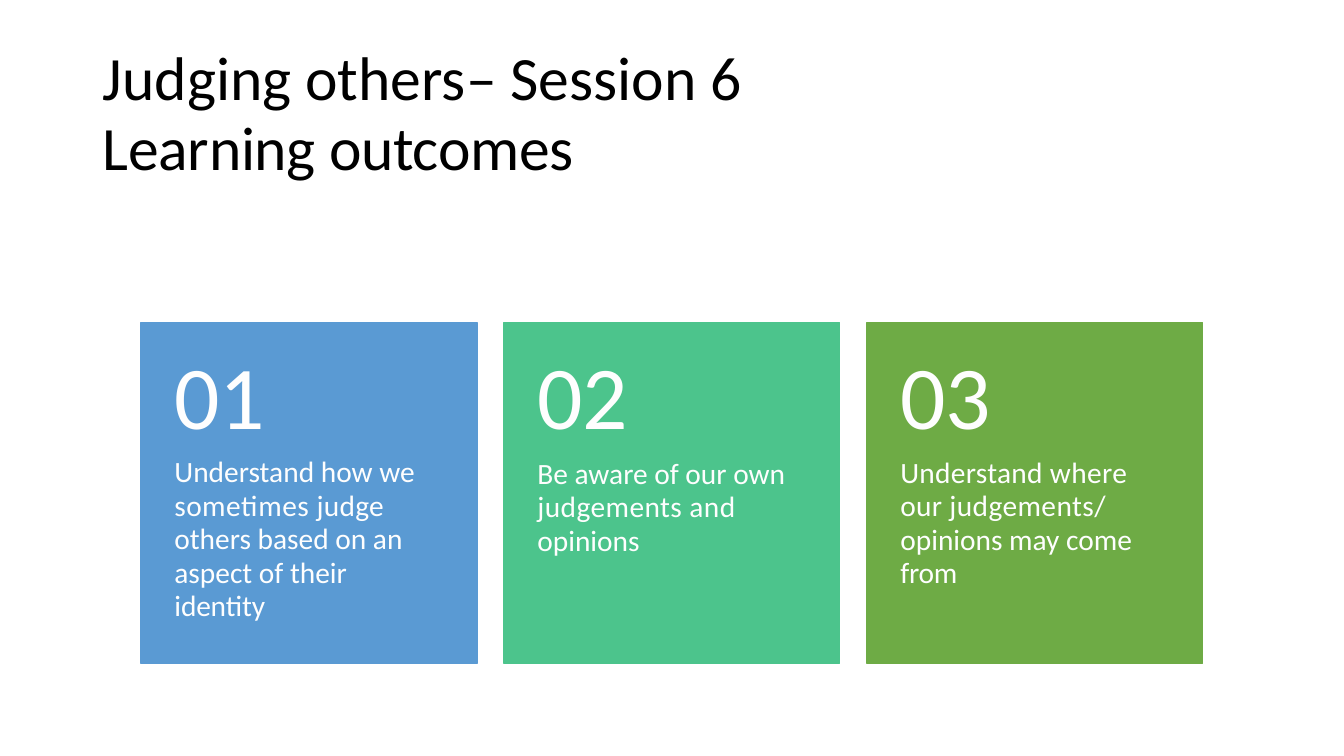
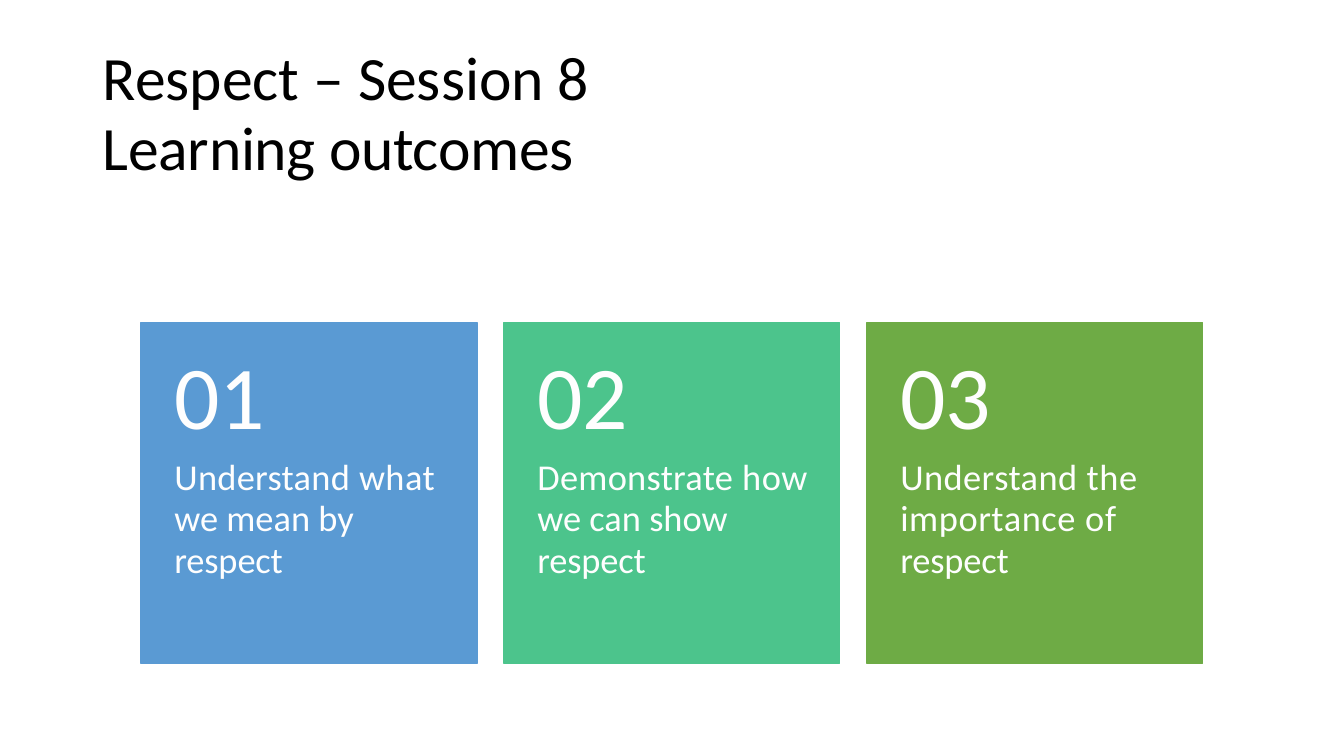
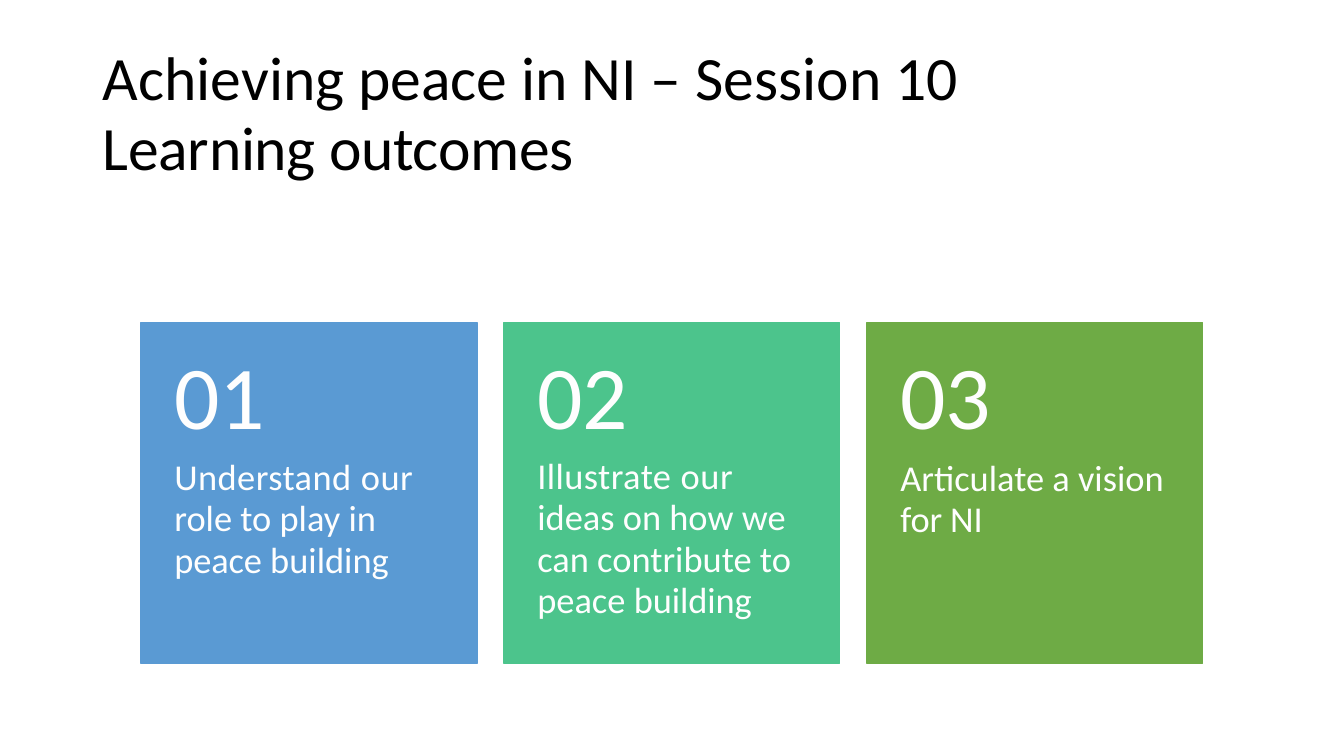
"""Build three learning-outcome slides, each with a title and three numbered cards."""
from pptx import Presentation
from pptx.dml.color import RGBColor
from pptx.enum.shapes import MSO_SHAPE
from pptx.enum.text import MSO_ANCHOR, MSO_AUTO_SIZE, PP_ALIGN
from pptx.util import Inches, Pt

FONT = "Calibri"
TITLE_COLOUR, CARD_TEXT_COLOUR = "000000", "FEFEFE"
CARD_COLOURS = ["5A9AD3", "4CC48C", "6EAB45"]
CARD_LEFT, CARD_TOP, CARD_WIDTH, CARD_HEIGHT = 1.4, 3.2, 3.33, 3.38
CARD_PITCH = 3.6
TEXT_INSET, TEXT_TOP = 0.33, 3.37
NUMBER_HEIGHT, LINE_SHARE = 1.17, 1.16

SESSIONS = [
    {"title": "Judging others– Session 6", "size": 21, "text_width": 2.55, "cards": [
        (5, 6.2, [("Understand how we ", 0), ("sometimes ", 0.3), ("judge ", 0.2),
                  ("others based on an aspect of their ", 0), ("identity", -0.1)]),
        (3, 7.2, [("Be aware of our own ", 0), ("judgements and ", 0.3), ("opinions", 0)]),
        (4, 6.6, [("Understand ", 0.2), ("where ", 0.3), ("our ", 0.2), ("judgements/ ", 0.3),
                  ("opinions may come ", 0), ("from", -0.2)]),
    ]},
    {"title": "Respect – Session 8", "size": 26, "text_width": 2.73, "cards": [
        (3, 7, [("Understand ", 0.2), ("what ", 0.3), ("we mean by ", 0), ("respect", -0.1)]),
        (3, 7, [("Demonstrate ", 0.2), ("how ", 0.4), ("we can show ", 0), ("respect", -0.1)]),
        (3, 7, [("Understand ", 0.3), ("the importance ", 0.4), ("of ", 0.5), ("respect", -0.1)]),
    ]},
    {"title": "Achieving peace in NI – Session 10", "size": 26, "text_width": 2.73, "cards": [
        (3, 7, [("Understand ", 0.3), ("our ", 0.4), ("role to play in ", 0),
                ("peace ", -0.1), ("building", 0)]),
        (4, 6.2, [("Illustrate ", 0.3), ("our ", 0.4),
                  ("ideas on how we can contribute to peace ", 0), ("building", -0.1)]),
        (2, 7.7, [("Articulate a vision ", 0), ("for NI", -0.1)]),
    ]},
]


def colour(value):
    return RGBColor.from_string(value)


def place(shape, left, top, width, height):
    shape.left, shape.top = Inches(left), Inches(top)
    shape.width, shape.height = Inches(width), Inches(height)


def set_frame(frame, auto_size):
    frame.margin_left = frame.margin_right = frame.margin_top = frame.margin_bottom = 0
    frame.word_wrap = True
    frame.vertical_anchor = MSO_ANCHOR.TOP
    frame.auto_size = auto_size


def style(paragraph, size, text_colour, line_spacing=1.0):
    paragraph.alignment = PP_ALIGN.LEFT
    paragraph.line_spacing = line_spacing
    paragraph.font.name = FONT
    paragraph.font.size = Pt(size)
    paragraph.font.color.rgb = colour(text_colour)


def track(run, points):
    if points:
        run._r.get_or_add_rPr().set("spc", str(round(points * 100)))


def add_title(slide, text):
    title = slide.shapes.title
    place(title, 1.02, 0.44, 8.56, 1.41)
    set_frame(title.text_frame, MSO_AUTO_SIZE.NONE)
    paragraph = title.text_frame.paragraphs[0]
    paragraph.text = f"{text}\vLearning outcomes"
    style(paragraph, 44, TITLE_COLOUR, 0.95)
    track(paragraph.runs[-1], -0.25)


def add_card(slide, index, session):
    lines, gap, parts = session["cards"][index]
    left = CARD_LEFT + index * CARD_PITCH
    card = slide.shapes.add_shape(
        MSO_SHAPE.RECTANGLE, *map(Inches, (left, CARD_TOP, CARD_WIDTH, CARD_HEIGHT)))
    card.shadow.inherit = False
    card.fill.solid()
    card.fill.fore_color.rgb = card.line.color.rgb = colour(CARD_COLOURS[index])
    card.line.width = Pt(1)

    height = NUMBER_HEIGHT + (gap + lines * session["size"] * LINE_SHARE) / 72
    box = slide.shapes.add_textbox(
        *map(Inches, (left + TEXT_INSET, TEXT_TOP, session["text_width"], height)))
    frame = box.text_frame
    set_frame(frame, MSO_AUTO_SIZE.SHAPE_TO_FIT_TEXT)
    number = frame.paragraphs[0]
    number.text = f"{index + 1:02}"
    style(number, 64, CARD_TEXT_COLOUR)
    track(number.runs[0], -0.1)
    outcome = frame.add_paragraph()
    style(outcome, session["size"], CARD_TEXT_COLOUR, 0.95)
    outcome.space_before = Pt(gap)
    for text, spacing in parts:
        run = outcome.add_run()
        run.text = text
        track(run, spacing)


def main():
    presentation = Presentation()
    presentation.slide_width, presentation.slide_height = Inches(13.33), Inches(7.5)
    for session in SESSIONS:
        slide = presentation.slides.add_slide(presentation.slide_layouts[5])
        add_title(slide, session["title"])
        for index in range(len(session["cards"])):
            add_card(slide, index, session)
    presentation.save("out.pptx")


if __name__ == "__main__":
    main()
